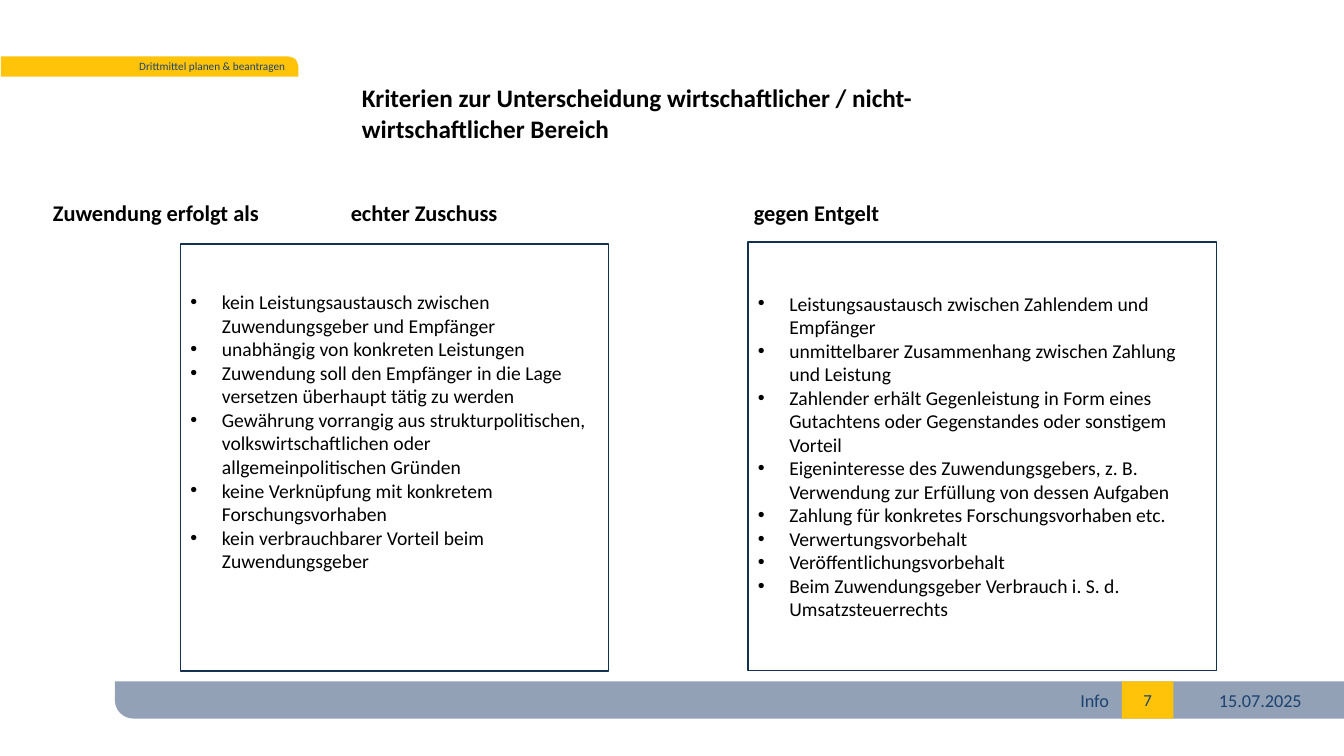
from lxml import etree
from pptx import Presentation
from pptx.dml.color import RGBColor
from pptx.enum import shapes, text
from pptx.oxml.ns import qn
from pptx.util import Pt

NAVY, YELLOW, GREY, BLACK, BORDER = "1C426F", "FFC40A", "92A1B5", "000000", "153152"
LEFT, CENTER, RIGHT = text.PP_ALIGN.LEFT, text.PP_ALIGN.CENTER, text.PP_ALIGN.RIGHT
SINGLE_ROUND = shapes.MSO_SHAPE.ROUND_1_RECTANGLE
RECTANGLE = shapes.MSO_SHAPE.RECTANGLE


def color(value):
    return RGBColor.from_string(value)


def format_paragraph(paragraph, size, ink, alignment=LEFT, bold=False):
    paragraph.alignment = alignment
    paragraph.font.name = "Calibri"
    paragraph.font.size = Pt(size)
    paragraph.font.bold = bold
    paragraph.font.color.rgb = color(ink)


presentation = Presentation()
presentation.slide_width, presentation.slide_height = Pt(960), Pt(540)
slide = presentation.slides.add_slide(presentation.slide_layouts[5])

# Header tab, footer bar and page number
BAR_TOP, BAR_HEIGHT = 486.7, 26.6
bands = [
    (SINGLE_ROUND, 0.7, 40.3, 212.4, 14.4, 0, YELLOW, "Drittmittel planen & beantragen", 8, RIGHT),
    (SINGLE_ROUND, 82, BAR_TOP, 878, BAR_HEIGHT, 180, GREY, "", 12, CENTER),
    (RECTANGLE, 801.4, BAR_TOP, 36.7, BAR_HEIGHT, 0, YELLOW, "7", 12, CENTER),
]
for kind, left, top, width, height, rotation, fill, label, size, alignment in bands:
    band = slide.shapes.add_shape(kind, Pt(left), Pt(top), Pt(width), Pt(height))
    band.shadow.inherit = False
    band.rotation = rotation
    band.fill.solid()
    band.fill.fore_color.rgb = color(fill)
    band.line.fill.background()
    if kind == SINGLE_ROUND:
        band.adjustments[0] = 0.5
    if label:
        band.text_frame.text = label
        band.text_frame.vertical_anchor = text.MSO_ANCHOR.MIDDLE
        format_paragraph(band.text_frame.paragraphs[0], size, NAVY, alignment)

# Footer texts
for label, left, width, alignment in [("15.07.2025", 840.2, 120, CENTER), ("Info", 406.8, 392.4, RIGHT)]:
    footer = slide.shapes.add_textbox(Pt(left), Pt(BAR_TOP), Pt(width), Pt(BAR_HEIGHT))
    footer.text_frame.word_wrap = True
    footer.text_frame.vertical_anchor = text.MSO_ANCHOR.MIDDLE
    footer.text_frame.text = label
    format_paragraph(footer.text_frame.paragraphs[0], 13, NAVY, alignment)

# Title
title = slide.shapes.title
title.left, title.top, title.width, title.height = Pt(251.3), Pt(55.4), Pt(457.2), Pt(72.7)
title.text_frame.text = "Kriterien zur Unterscheidung wirtschaftlicher / nicht-wirtschaftlicher Bereich"
title.text_frame.auto_size = text.MSO_AUTO_SIZE.NONE
title.text_frame.vertical_anchor = text.MSO_ANCHOR.TOP
format_paragraph(title.text_frame.paragraphs[0], 18, BLACK, bold=True)

# Column headings on tab stops
headings = slide.shapes.add_textbox(Pt(30.7), Pt(139), Pt(776), Pt(27))
headings.text_frame.word_wrap = True
headings.text_frame.text = "Zuwendung erfolgt als\techter Zuschuss\tgegen Entgelt"
heading = headings.text_frame.paragraphs[0]
tab_list = etree.SubElement(heading._p.get_or_add_pPr(), qn("a:tabLst"))
for position in (212.8, 500.7):
    etree.SubElement(tab_list, qn("a:tab"), pos=str(Pt(position)), algn="l")
format_paragraph(heading, 16, BLACK, bold=True)

# Criteria boxes: left, top, width, height, bottom inset, bullets
criteria = [
    (534.2, 172.8, 334.8, 306, 3.6, [
        "Leistungsaustausch zwischen Zahlendem und Empfänger",
        "unmittelbarer Zusammenhang zwischen Zahlung und Leistung",
        "Zahlender erhält Gegenleistung in Form eines Gutachtens oder Gegenstandes oder sonstigem Vorteil",
        "Eigeninteresse des Zuwendungsgebers, z. B. Verwendung zur Erfüllung von dessen Aufgaben",
        "Zahlung für konkretes Forschungsvorhaben etc.",
        "Verwertungsvorbehalt",
        "Veröffentlichungsvorbehalt",
        "Beim Zuwendungsgeber Verbrauch i. S. d. Umsatzsteuerrechts",
    ]),
    (128.9, 174.2, 306, 305.3, 41, [
        "kein Leistungsaustausch zwischen Zuwendungsgeber und Empfänger",
        "unabhängig von konkreten Leistungen",
        "Zuwendung soll den Empfänger in die Lage versetzen überhaupt tätig zu werden",
        "Gewährung vorrangig aus strukturpolitischen, volkswirtschaftlichen oder allgemeinpolitischen Gründen",
        "keine Verknüpfung mit konkretem Forschungsvorhaben",
        "kein verbrauchbarer Vorteil beim Zuwendungsgeber",
    ]),
]
for left, top, width, height, bottom_inset, bullets in criteria:
    box = slide.shapes.add_shape(RECTANGLE, Pt(left), Pt(top), Pt(width), Pt(height))
    box.shadow.inherit = False
    box.fill.background()
    box.line.color.rgb = color(BORDER)
    box.line.width = Pt(1)
    frame = box.text_frame
    frame.vertical_anchor = text.MSO_ANCHOR.MIDDLE
    frame.margin_bottom = Pt(bottom_inset)
    frame.text = "\n".join(bullets)
    for paragraph in frame.paragraphs:
        properties = paragraph._p.get_or_add_pPr()
        properties.set("marL", str(Pt(22.5)))
        properties.set("indent", str(Pt(-22.5)))
        etree.SubElement(properties, qn("a:buFont"), typeface="Arial")
        etree.SubElement(properties, qn("a:buChar"), char="•")
        format_paragraph(paragraph, 14, BLACK)

presentation.save("out.pptx")
